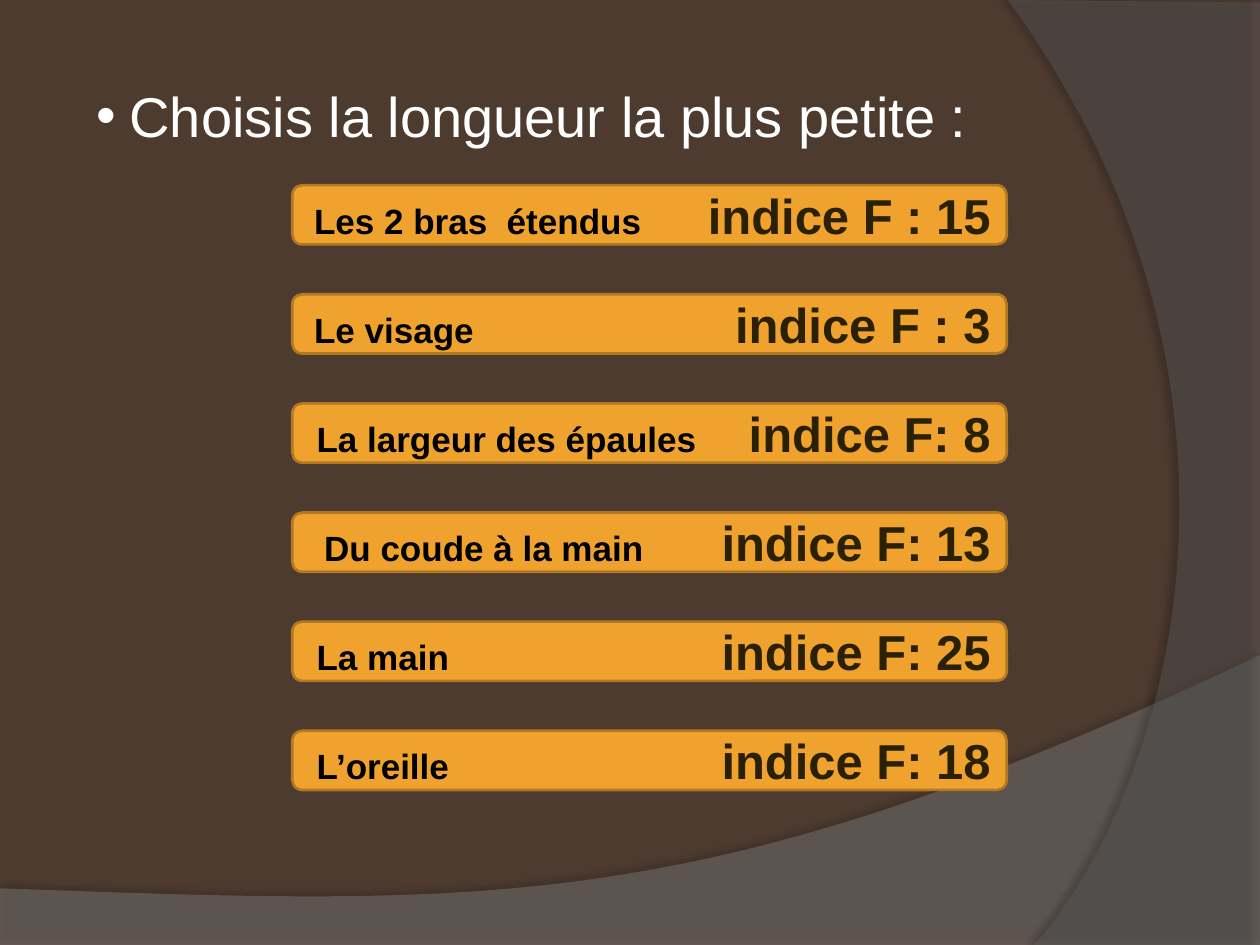
from dataclasses import dataclass

from lxml.etree import SubElement
from pptx import Presentation
from pptx.dml.color import RGBColor
from pptx.enum.shapes import MSO_SHAPE
from pptx.enum.text import MSO_ANCHOR, PP_ALIGN
from pptx.oxml.ns import qn
from pptx.util import Inches, Pt


@dataclass(frozen=True)
class Theme:
    font: str = "Arial"
    background: str = "4E3B30"
    lower_wave: str = "7F7F7F"
    right_wave: str = "5E5E5E"
    shadow: str = "000000"
    bar: str = "F0A22E"
    bar_edge: str = "B27822"
    heading: str = "FFFFFF"
    label: str = "000000"
    clue: str = "2A2003"
    heading_size: int = 32
    label_size: int = 20
    clue_size: int = 28


THEME = Theme()

# label, clue, left inset of the label in inches
ANSWERS = [
    ("Les 2 bras  étendus", "indice F : 15", 0.15),
    ("Le visage", "indice F : 3", 0.15),
    ("La largeur des épaules", "indice F: 8", 0.17),
    ("Du coude à la main", "indice F: 13", 0.23),
    ("La main", "indice F: 25", 0.17),
    ("L’oreille", "indice F: 18", 0.17),
]


def set_format(target, values):
    for name, value in values.items():
        setattr(target, name, value)


def paint(fill, color):
    fill.solid()
    fill.fore_color.rgb = RGBColor.from_string(color)


def add_run(paragraph, text, size, color, bold=False):
    run = paragraph.add_run()
    run.text = text
    set_format(run.font, {"name": THEME.font, "size": Pt(size), "bold": bold})
    run.font.color.rgb = RGBColor.from_string(color)


def bezier(start, control_1, control_2, end, steps=60):
    """Return points along a cubic curve, without its start."""
    points = []
    for step in range(1, steps + 1):
        t = step / steps
        weights = ((1 - t) ** 3, 3 * t * (1 - t) ** 2, 3 * t * t * (1 - t), t ** 3)
        corners = (start, control_1, control_2, end)
        points.append(tuple(sum(w * c[axis] for w, c in zip(weights, corners))
                            for axis in (0, 1)))
    return points


def add_wave(slide, left, top, outline, color, opacity, shadow):
    """Draw a translucent outline, given relative to left and top."""
    points = [(Inches(left + x), Inches(top + y)) for x, y in outline]
    builder = slide.shapes.build_freeform(*points[0])
    builder.add_line_segments(points[1:], close=True)
    wave = builder.convert_to_shape()
    paint(wave.fill, color)
    wave.line.fill.background()
    wave.shadow.inherit = False
    properties = wave._element.spPr
    fill_color = properties.find(qn("a:solidFill")).find(qn("a:srgbClr"))
    SubElement(fill_color, qn("a:alpha"), val=str(opacity * 1000))

    shadow_opacity, blur, distance, angle = shadow
    outer = SubElement(properties.find(qn("a:effectLst")), qn("a:outerShdw"),
                       blurRad=str(Pt(blur)), dist=str(Pt(distance)),
                       dir=str(angle * 60000), algn="ctr", rotWithShape="0")
    shadow_color = SubElement(outer, qn("a:srgbClr"), val=THEME.shadow)
    SubElement(shadow_color, qn("a:alpha"), val=str(shadow_opacity * 1000))


def add_backdrop(slide):
    paint(slide.background.fill, THEME.background)
    lower = [(0, 1.85), (0, 2.31), (10, 2.31), (10, 0)]
    lower += bezier((10, 0), (5.59, 2.09), (3.91, 1.99), (0, 1.85))
    add_wave(slide, 0, 5.2, lower, THEME.lower_wave, 45, (35, 4, 3.5, 270))
    right = [(2, 0.02), (2, 7.5), (0.21, 7.5)]
    right += bezier((0.21, 7.5), (1.35, 6.19), (2.18, 3), (0, 0))
    add_wave(slide, 8, 0, right, THEME.right_wave, 40, (45, 4, 4, 180))


def add_heading(slide, left, top, width, height, text):
    heading = slide.shapes.add_textbox(Inches(left), Inches(top),
                                       Inches(width), Inches(height))
    heading.text_frame.word_wrap = True
    paragraph = heading.text_frame.paragraphs[0]
    add_run(paragraph, text, THEME.heading_size, THEME.heading)
    properties = paragraph._p.get_or_add_pPr()
    hanging = Inches(0.26)
    properties.set("marL", str(hanging))
    properties.set("indent", str(-hanging))
    SubElement(properties, qn("a:buFont"), typeface=THEME.font)
    SubElement(properties, qn("a:buChar"), char="•")


def add_answer(slide, left, top, width, height, label, clue, inset):
    """Draw a bar with a label at its left and a clue ending at its right."""
    bar = slide.shapes.add_shape(MSO_SHAPE.ROUNDED_RECTANGLE, Inches(left),
                                 Inches(top), Inches(width), Inches(height))
    bar.shadow.inherit = False
    paint(bar.fill, THEME.bar)
    paint(bar.line.fill, THEME.bar_edge)
    bar.line.width = Pt(1.5)
    set_format(bar.text_frame, {
        "word_wrap": True,
        "vertical_anchor": MSO_ANCHOR.MIDDLE,
        "margin_left": Inches(inset),
        "margin_right": Inches(0.05),
    })
    paragraph = bar.text_frame.paragraphs[0]
    paragraph.alignment = PP_ALIGN.LEFT
    add_run(paragraph, label + "\t", THEME.label_size, THEME.label, bold=True)
    add_run(paragraph, clue, THEME.clue_size, THEME.clue, bold=True)
    tabs = SubElement(paragraph._p.get_or_add_pPr(), qn("a:tabLst"))
    clue_end = Inches(width - 0.15 - inset)
    SubElement(tabs, qn("a:tab"), pos=str(clue_end), algn="r")


def add_answers(slide, left, top, width, height, bar_height=0.47):
    pitch = (height - bar_height) / (len(ANSWERS) - 1)
    for row, answer in enumerate(ANSWERS):
        add_answer(slide, left, top + row * pitch, width, bar_height, *answer)


def main():
    deck = Presentation()
    set_format(deck, {"slide_width": Inches(10), "slide_height": Inches(7.5)})
    slide = deck.slides.add_slide(deck.slide_layouts[6])
    add_backdrop(slide)
    add_heading(slide, 0.67, 0.6, 8.9, 0.64, "Choisis la longueur la plus petite :")
    add_answers(slide, 2.32, 1.47, 5.67, 4.8)
    deck.save("out.pptx")


if __name__ == "__main__":
    main()
